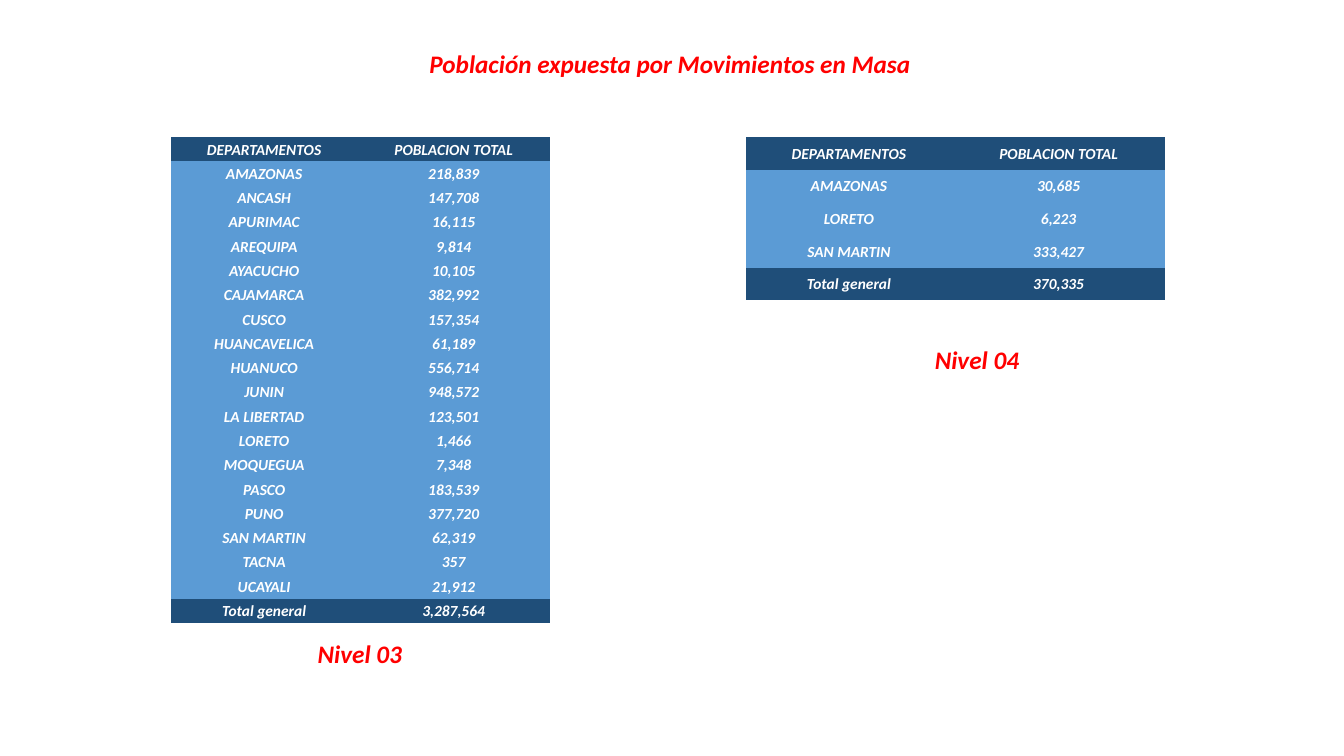
from dataclasses import dataclass

from pptx import Presentation
from pptx.dml.color import RGBColor
from pptx.enum.text import MSO_ANCHOR, MSO_AUTO_SIZE, PP_ALIGN
from pptx.oxml.ns import qn
from pptx.util import Inches, Pt


@dataclass(frozen=True)
class Theme:
    font: str = "Calibri"
    heading_color: RGBColor = RGBColor(0xFF, 0x00, 0x00)
    cell_text: RGBColor = RGBColor(0xFF, 0xFF, 0xFF)
    dark_blue: RGBColor = RGBColor(0x1F, 0x4E, 0x79)
    light_blue: RGBColor = RGBColor(0x5B, 0x9B, 0xD5)
    heading_size: Pt = Pt(18)
    cell_size: Pt = Pt(11)


THEME = Theme()
NO_GRID_STYLE = "{2D5ABB26-0587-4C30-8999-92F81FD0307C}"
HEADER = ("DEPARTAMENTOS", "POBLACION TOTAL")

LEVEL_3 = [
    ("AMAZONAS", "218,839"),
    ("ANCASH", "147,708"),
    ("APURIMAC", "16,115"),
    ("AREQUIPA", "9,814"),
    ("AYACUCHO", "10,105"),
    ("CAJAMARCA", "382,992"),
    ("CUSCO", "157,354"),
    ("HUANCAVELICA", "61,189"),
    ("HUANUCO", "556,714"),
    ("JUNIN", "948,572"),
    ("LA LIBERTAD", "123,501"),
    ("LORETO", "1,466"),
    ("MOQUEGUA", "7,348"),
    ("PASCO", "183,539"),
    ("PUNO", "377,720"),
    ("SAN MARTIN", "62,319"),
    ("TACNA", "357"),
    ("UCAYALI", "21,912"),
    ("Total general", "3,287,564"),
]
LEVEL_4 = [
    ("AMAZONAS", "30,685"),
    ("LORETO", "6,223"),
    ("SAN MARTIN", "333,427"),
    ("Total general", "370,335"),
]


def write_text(text_frame, text, size, color):
    """Fill the first paragraph with one centred bold italic run."""
    paragraph = text_frame.paragraphs[0]
    paragraph.alignment = PP_ALIGN.CENTER
    run = paragraph.add_run()
    run.text = text
    run.font.name = THEME.font
    run.font.size = size
    run.font.bold = run.font.italic = True
    run.font.color.rgb = color


def format_heading(shape, text, wrap):
    text_frame = shape.text_frame
    text_frame.word_wrap = wrap
    text_frame.auto_size = MSO_AUTO_SIZE.SHAPE_TO_FIT_TEXT
    text_frame.vertical_anchor = MSO_ANCHOR.TOP
    write_text(text_frame, text, THEME.heading_size, THEME.heading_color)


def set_title(slide, text):
    title = slide.shapes.title
    title.left, title.top = Inches(4.13), Inches(0.43)
    title.width, title.height = Inches(5.03), Inches(0.4)
    format_heading(title, text, wrap=False)


def add_level_label(slide, text, left, top):
    label = slide.shapes.add_textbox(Inches(left), Inches(top), Inches(1.1), Inches(0.4))
    format_heading(label, text, wrap=True)


def format_cell(cell, text, fill):
    cell.fill.solid()
    cell.fill.fore_color.rgb = fill
    cell.vertical_anchor = MSO_ANCHOR.MIDDLE
    cell.margin_left = cell.margin_right = cell.margin_top = Inches(0.01)
    cell.margin_bottom = 0
    write_text(cell.text_frame, text, THEME.cell_size, THEME.cell_text)


def add_population_table(slide, records, left, column_widths, height):
    """Add equal rows, with the header and the total in dark blue."""
    rows = [HEADER, *records]
    frame = slide.shapes.add_table(
        len(rows), len(HEADER), Inches(left), Inches(1.36),
        Inches(sum(column_widths)), Inches(height),
    )
    table = frame.table
    table.horz_banding = False
    next(frame.element.iter(qn("a:tableStyleId"))).text = NO_GRID_STYLE
    for column, width in zip(table.columns, column_widths):
        column.width = Inches(width)
    for row_index, row in enumerate(rows):
        is_edge = row_index in (0, len(rows) - 1)
        fill = THEME.dark_blue if is_edge else THEME.light_blue
        for column_index, text in enumerate(row):
            format_cell(table.cell(row_index, column_index), text, fill)


def main():
    presentation = Presentation()
    presentation.slide_width = Inches(13.33)
    presentation.slide_height = Inches(7.5)
    title_only = presentation.slide_layouts.get_by_name("Title Only")
    slide = presentation.slides.add_slide(title_only)

    set_title(slide, "Población expuesta por Movimientos en Masa")
    add_level_label(slide, "Nivel 03", 3.02, 6.28)
    add_level_label(slide, "Nivel 04", 9.14, 3.37)
    add_population_table(slide, LEVEL_3, 1.7, (1.84, 1.92), 4.82)
    add_population_table(slide, LEVEL_4, 7.4, (2.04, 2.12), 1.62)

    presentation.save("out.pptx")


if __name__ == "__main__":
    main()
